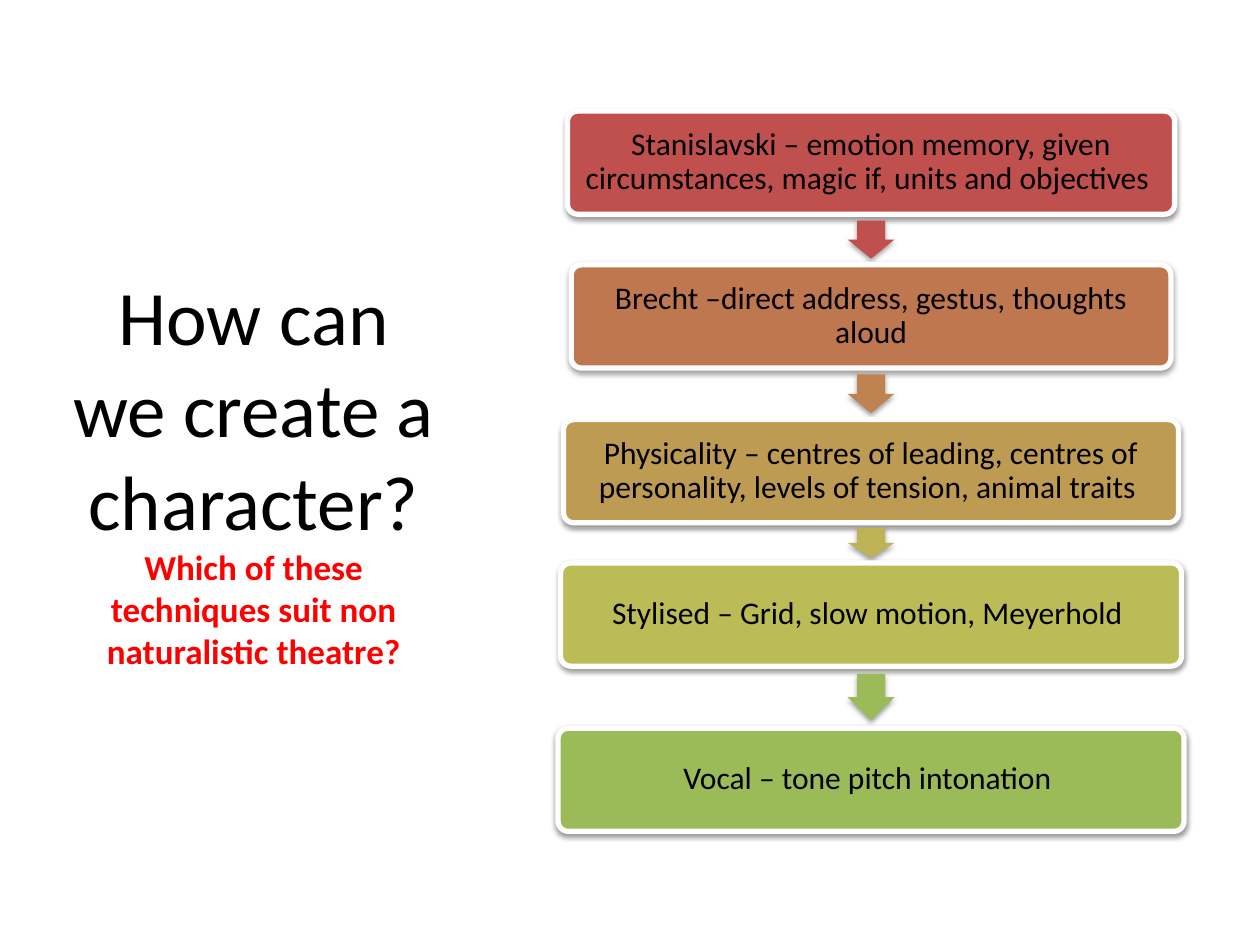
import pptx
import pptx.util
import lxml.etree
from pptx.dml.color import RGBColor
from pptx.enum.shapes import MSO_SHAPE
from pptx.enum.text import MSO_ANCHOR, PP_ALIGN
from pptx.oxml.ns import qn
from pptx.util import Cm, Pt

FONT = "Calibri"
BLACK = RGBColor(0x00, 0x00, 0x00)
WHITE = RGBColor(0xFF, 0xFF, 0xFF)
RED = RGBColor(0xFF, 0x00, 0x00)
BRICK = RGBColor(0xC0, 0x50, 0x4D)
COPPER = RGBColor(0xBF, 0x77, 0x50)
BRONZE = RGBColor(0xBE, 0x83, 0x51)
OCHRE = RGBColor(0xBD, 0x9B, 0x53)
SAND = RGBColor(0xBD, 0xB2, 0x55)
OLIVE = RGBColor(0xBC, 0xBC, 0x56)
GREEN = RGBColor(0x9B, 0xBB, 0x59)

# text, top within the flow (cm), width (cm), fill, fill of the arrow below
TECHNIQUES = [
    ("Stanislavski – emotion memory, given circumstances, magic if, units and objectives ",
     0, 12.24, BRICK, BRICK),
    ("Brecht –direct address, gestus, thoughts aloud", 3.1, 12.09, COPPER, BRONZE),
    ("Physicality – centres of leading, centres of personality, levels of tension, animal traits ",
     6.22, 12.4, OCHRE, SAND),
    ("Stylised – Grid, slow motion, Meyerhold ", 9.11, 12.52, OLIVE, GREEN),
    ("Vocal – tone pitch intonation ", 12.44, 12.62, GREEN, None),
]
BOX_HEIGHT = 2.08
ARROW_WIDTH = 0.94
ARROW_SHARE = 0.75  # arrow length as a share of the gap between two boxes


def format_run(run, size, color, bold=False):
    run.font.name = FONT
    run.font.size = Pt(size)
    run.font.color.rgb = color
    run.font.bold = bold


def add_shadow(shape):
    shape.shadow.inherit = False
    effects = shape._element.spPr.find(qn("a:effectLst"))
    shadow = lxml.etree.SubElement(
        effects, qn("a:outerShdw"), blurRad=str(Pt(3.1)), dist=str(Pt(1.6)),
        dir="5400000", rotWithShape="0")
    color = lxml.etree.SubElement(shadow, qn("a:srgbClr"), val=str(BLACK))
    lxml.etree.SubElement(color, qn("a:alpha"), val="38000")


def add_filled_shape(slide, kind, left, top, width, height, color):
    shape = slide.shapes.add_shape(kind, Cm(left), Cm(top), Cm(width), Cm(height))
    shape.fill.solid()
    shape.fill.fore_color.rgb = color
    add_shadow(shape)
    return shape


def add_title(slide, left, top, width, height):
    box = slide.shapes.add_textbox(Cm(left), Cm(top), Cm(width), Cm(height))
    frame = box.text_frame
    frame.word_wrap = True
    frame.vertical_anchor = MSO_ANCHOR.MIDDLE
    paragraph = frame.paragraphs[0]
    paragraph.text = ("How can we create a character?\v"
                      "Which of these techniques suit non naturalistic theatre?")
    paragraph.alignment = PP_ALIGN.CENTER
    question, prompt = paragraph.runs
    format_run(question, 44, BLACK)
    format_run(prompt, 20, RED, bold=True)


def add_technique(slide, text, left, top, width, color):
    box = add_filled_shape(slide, MSO_SHAPE.ROUNDED_RECTANGLE,
                           left, top, width, BOX_HEIGHT, color)
    box.adjustments[0] = 0.1
    box.line.color.rgb = WHITE
    box.line.width = Pt(3)
    frame = box.text_frame
    frame.text = text
    frame.word_wrap = True
    frame.vertical_anchor = MSO_ANCHOR.MIDDLE
    frame.margin_left = frame.margin_right = Cm(0.18)
    frame.margin_top = frame.margin_bottom = Cm(0.18)
    paragraph = frame.paragraphs[0]
    paragraph.alignment = PP_ALIGN.CENTER
    paragraph.line_spacing = 0.9
    format_run(paragraph.runs[0], 18, BLACK)


def add_arrow(slide, center, gap_top, gap_bottom, color):
    """Place a down arrow in the middle of the gap between two boxes."""
    length = ARROW_SHARE * (gap_bottom - gap_top)
    arrow = add_filled_shape(
        slide, MSO_SHAPE.DOWN_ARROW, center - ARROW_WIDTH / 2,
        (gap_top + gap_bottom - length) / 2, ARROW_WIDTH, length, color)
    arrow.adjustments[0] = 0.6
    arrow.adjustments[1] = 0.5
    arrow.line.fill.background()


def add_technique_flow(slide, left, top, width):
    center = left + width / 2
    for index, (text, offset, box_width, color, arrow_color) in enumerate(TECHNIQUES):
        box_top = top + offset
        add_technique(slide, text, center - box_width / 2, box_top, box_width, color)
        if arrow_color is not None:
            next_top = top + TECHNIQUES[index + 1][1]
            add_arrow(slide, center, box_top + BOX_HEIGHT, next_top, arrow_color)


def main():
    presentation = pptx.Presentation()
    presentation.slide_width = Cm(25.4)
    presentation.slide_height = Cm(19.05)
    slide = presentation.slides.add_slide(presentation.slide_layouts[6])
    add_title(slide, 1.19, 1.55, 7.85, 15.85)
    add_technique_flow(slide, 11.25, 2.24, 12.62)
    presentation.save("out.pptx")


if __name__ == "__main__":
    main()
